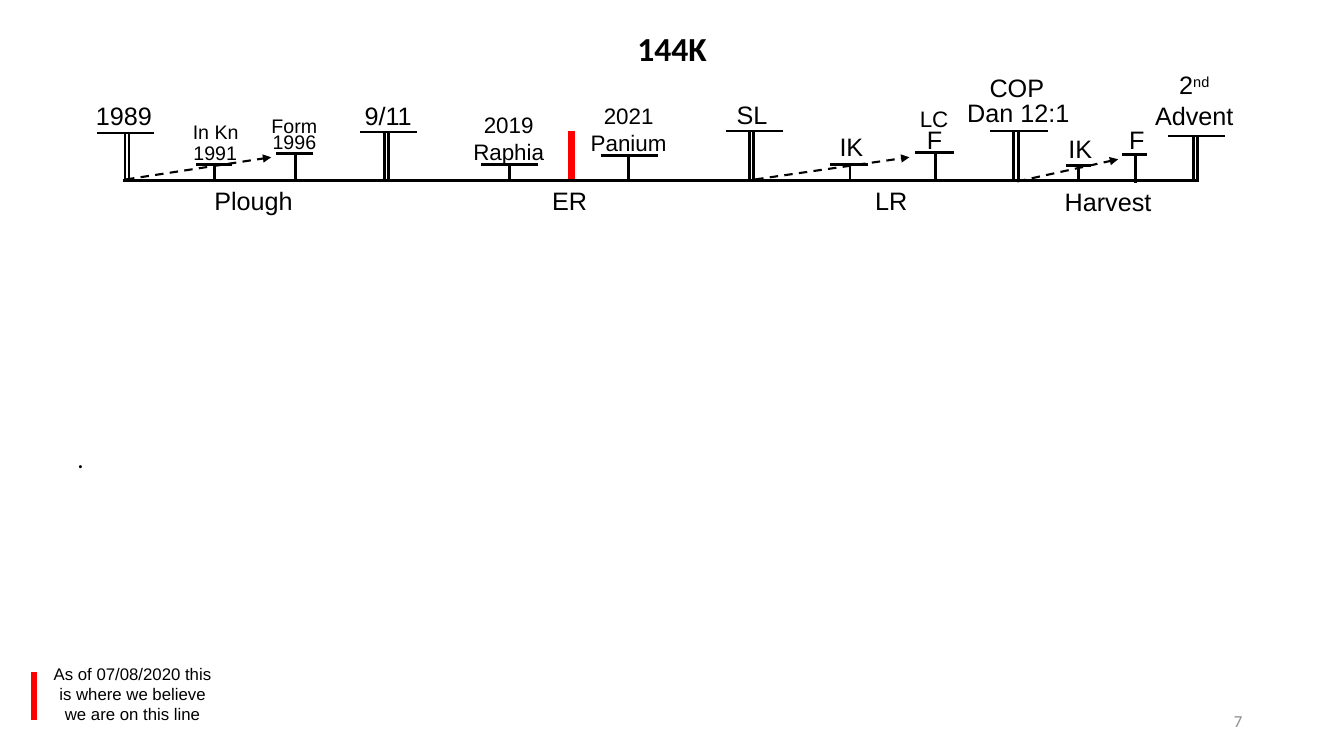
import dataclasses
import lxml.etree
import pptx
import pptx.dml.color
import pptx.enum.dml
import pptx.enum.shapes
import pptx.enum.text
import pptx.oxml.ns
import pptx.util

SCALE = 9144  # EMU per px, 100 px to the inch
ALIGN = pptx.enum.text.PP_ALIGN
ANCHOR = pptx.enum.text.MSO_ANCHOR


@dataclasses.dataclass(frozen=True)
class Theme:
    ink: str = "000000"
    now: str = "FF0000"
    gray: str = "8C8C8C"
    sans: str = "Arial"
    head: str = "Calibri"
    title: int = 24
    large: int = 18
    mid: int = 16
    small: int = 14
    note: int = 12
    thin: float = 1.5
    line: float = 2
    thick: float = 4.5


@dataclasses.dataclass(frozen=True)
class Mark:
    """A bar standing on one or two stems."""
    left: int
    right: int
    top: int
    stems: tuple[int, ...]
    foot: int


@dataclasses.dataclass(frozen=True)
class Label:
    text: str
    left: int
    top: int
    width: int
    height: int = 36
    size: int = 18


@dataclasses.dataclass(frozen=True)
class Stroke:
    x1: int
    y1: int
    x2: int
    y2: int


THEME = Theme()

MARKS = [
    Mark(96, 153, 132, (124, 128), 181),
    Mark(357, 414, 131, (381, 385), 180),
    Mark(720, 777, 130, (743, 747), 179),
    Mark(982, 1039, 130, (1005, 1010), 179),
    Mark(1158, 1215, 135, (1184, 1188), 181),
    Mark(194, 230, 163, (213,), 179),
    Mark(274, 310, 152, (293,), 181),
    Mark(477, 534, 163, (505,), 178),
    Mark(596, 653, 154, (623,), 179),
    Mark(823, 861, 163, (843,), 179),
    Mark(908, 946, 151, (928,), 181),
    Mark(1057, 1082, 164, (1070,), 180),
    Mark(1113, 1138, 153, (1126,), 182),
]

# Text between ^ signs is raised
LABELS = [
    Label("1989", 90, 96, 66),
    Label("9/11", 352, 96, 66),
    Label("SL", 713, 95, 66),
    Label("COP", 976, 68, 65),
    Label("Dan 12:1", 954, 93, 112),
    Label("2^nd^\nAdvent", 1137, 65, 95, 68),
    Label("Plough", 188, 180, 127),
    Label("ER", 532, 180, 66),
    Label("LR", 851, 180, 66),
    Label("Harvest", 1045, 181, 108),
    Label("In Kn", 174, 115, 80, 32, THEME.small),
    Label("1991", 173, 136, 81, size=THEME.small),
    Label("Form", 253, 109, 78, 32, THEME.small),
    Label("1996", 253, 125, 78, size=THEME.small),
    Label("2019\nRaphia", 457, 106, 95, 70, THEME.mid),
    Label("2021\nPanium", 576, 97, 95, 68, THEME.mid),
    Label("LC", 905, 100, 43, size=THEME.mid),
    Label("IK", 816, 126, 57),
    Label("F", 912, 119, 30, 34),
    Label("IK", 1053, 128, 37),
    Label("F", 1109, 119, 37),
    Label("As of 07/08/2020 this is where we believe we are on this line",
          44, 654, 175, 70, THEME.note),
]

BASE = Stroke(122, 179, 1187, 179)
RISES = [Stroke(125, 178, 269, 156), Stroke(749, 178, 902, 156),
         Stroke(1009, 180, 1109, 158)]
NOWS = [Stroke(567, 130, 567, 178), Stroke(34, 667, 34, 714)]


def px(*nums: int) -> list[pptx.util.Emu]:
    return [pptx.util.Emu(num * SCALE) for num in nums]


def tint(code: str) -> pptx.dml.color.RGBColor:
    return pptx.dml.color.RGBColor.from_string(code)


def write(shape, text: str, *, size: int = THEME.large, font: str = THEME.sans,
          ink: str = THEME.ink, bold: bool = False, align=ALIGN.CENTER,
          anchor=ANCHOR.TOP, space: float = 1.0, pad: tuple[int, int] = (4, 4)) -> None:
    frame = shape.text_frame
    frame.word_wrap = True
    frame.auto_size = pptx.enum.text.MSO_AUTO_SIZE.NONE
    frame.vertical_anchor = anchor
    frame.margin_left, frame.margin_top = px(*pad)
    frame.margin_right, frame.margin_bottom = px(*pad)
    for row, line in enumerate(text.split("\n")):
        para = frame.add_paragraph() if row else frame.paragraphs[0]
        para.alignment, para.line_spacing = align, space
        for spot, part in enumerate(line.split("^")):
            if not part:
                continue
            run = para.add_run()
            run.text = part
            run.font.size = pptx.util.Pt(size)
            run.font.name, run.font.bold = font, bold
            run.font.color.rgb = tint(ink)
            if spot % 2:
                run.font._element.set("baseline", "30000")


def draw(slide, stroke: Stroke, ink: str = THEME.ink,
         width: float = THEME.line, rise: bool = False) -> None:
    link = slide.shapes.add_connector(
        pptx.enum.shapes.MSO_CONNECTOR.STRAIGHT,
        *px(stroke.x1, stroke.y1, stroke.x2, stroke.y2))
    link.line.color.rgb = tint(ink)
    link.line.width = pptx.util.Pt(width)
    qn = pptx.oxml.ns.qn
    if rise:
        link.line.dash_style = pptx.enum.dml.MSO_LINE.DASH
        lxml.etree.SubElement(link.line._ln, qn("a:tailEnd"), type="triangle")
    lxml.etree.SubElement(link._element.spPr, qn("a:effectLst"))


def stand(slide, mark: Mark) -> None:
    draw(slide, Stroke(mark.right, mark.top, mark.left, mark.top))
    for stem in mark.stems:
        draw(slide, Stroke(stem, mark.top, stem, mark.foot))


def box(slide, left: int, top: int, width: int, height: int):
    return slide.shapes.add_textbox(*px(left, top, width, height))


def main() -> None:
    deck = pptx.Presentation()
    deck.slide_width, deck.slide_height = px(1333, 750)
    slide = deck.slides.add_slide(deck.slide_layouts[5])

    # Title, body and slide number
    title = slide.shapes.title
    title.left, title.top, title.width, title.height = px(0, 31, 1333, 38)
    write(title, "144K", size=THEME.title, font=THEME.head, bold=True,
          anchor=ANCHOR.MIDDLE, space=0.9, pad=(10, 5))
    write(box(slide, 67, 438, 1198, 260), ".", font=THEME.head,
          align=ALIGN.LEFT, space=0.9, pad=(10, 5))
    write(box(slide, 942, 695, 300, 40), "7", size=THEME.note, font=THEME.head,
          ink=THEME.gray, align=ALIGN.RIGHT, anchor=ANCHOR.MIDDLE, pad=(10, 5))

    # Time line with its marks
    draw(slide, BASE)
    for mark in MARKS:
        stand(slide, mark)
    for rise in RISES:
        draw(slide, rise, width=THEME.thin, rise=True)

    # Words, then the red signs for the present
    for label in LABELS:
        write(box(slide, label.left, label.top, label.width, label.height),
              label.text, size=label.size)
    for now in NOWS:
        draw(slide, now, ink=THEME.now, width=THEME.thick)

    deck.save("out.pptx")


if __name__ == "__main__":
    main()
